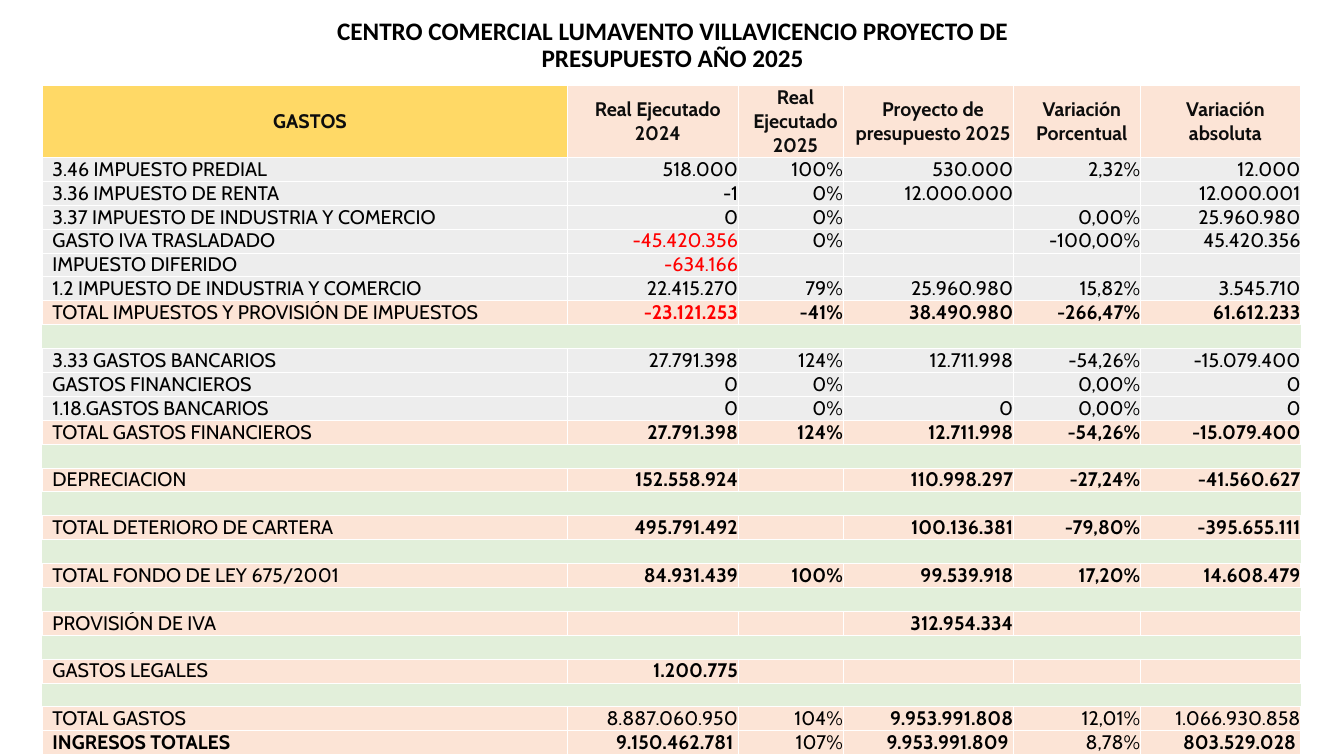
from lxml import etree
from pptx import Presentation
from pptx.dml.color import RGBColor
from pptx.enum.text import MSO_ANCHOR, MSO_AUTO_SIZE, PP_ALIGN
from pptx.oxml.ns import qn
from pptx.util import Inches, Pt

LEFT, MID, RIGHT = PP_ALIGN.LEFT, PP_ALIGN.CENTER, PP_ALIGN.RIGHT
CENTER, BOTTOM = MSO_ANCHOR.MIDDLE, MSO_ANCHOR.BOTTOM

TITLE = "CENTRO COMERCIAL LUMAVENTO VILLAVICENCIO PROYECTO DE\vPRESUPUESTO AÑO 2025"
GAP = ("gap", "", "", "", "", "", "")
ROWS = [
    ("head", "GASTOS", "Real Ejecutado 2024", "Real Ejecutado 2025",
     "Proyecto de presupuesto 2025", "Variación Porcentual", "Variación absoluta"),
    ("item", "3.46 IMPUESTO PREDIAL", "518.000", "100%", "530.000", "2,32%", "12.000"),
    ("item", "3.36 IMPUESTO DE RENTA", "-1", "0%", "12.000.000", "", "12.000.001"),
    ("item", "3.37 IMPUESTO DE INDUSTRIA Y COMERCIO", "0", "0%", "", "0,00%", "25.960.980"),
    ("item", "GASTO IVA TRASLADADO", "-45.420.356", "0%", "", "-100,00%", "45.420.356"),
    ("item", "IMPUESTO DIFERIDO", "-634.166", "", "", "", ""),
    ("item", "1.2 IMPUESTO DE INDUSTRIA Y COMERCIO", "22.415.270", "79%",
     "25.960.980", "15,82%", "3.545.710"),
    ("total", "TOTAL IMPUESTOS Y PROVISIÓN DE IMPUESTOS", "-23.121.253", "-41%",
     "38.490.980", "-266,47%", "61.612.233"),
    GAP,
    ("item", "3.33 GASTOS BANCARIOS", "27.791.398", "124%", "12.711.998", "-54,26%", "-15.079.400"),
    ("item", "GASTOS FINANCIEROS", "0", "0%", "", "0,00%", "0"),
    ("item", "1.18.GASTOS BANCARIOS", "0", "0%", "0", "0,00%", "0"),
    ("total", "TOTAL GASTOS FINANCIEROS", "27.791.398", "124%",
     "12.711.998", "-54,26%", "-15.079.400"),
    GAP,
    ("total", "DEPRECIACION", "152.558.924", "", "110.998.297", "-27,24%", "-41.560.627"),
    GAP,
    ("total", "TOTAL DETERIORO DE CARTERA", "495.791.492", "",
     "100.136.381", "-79,80%", "-395.655.111"),
    GAP,
    ("total", "TOTAL FONDO DE LEY 675/2001", "84.931.439", "100%",
     "99.539.918", "17,20%", "14.608.479"),
    GAP,
    ("total", "PROVISIÓN DE IVA", "", "", "312.954.334", "", ""),
    GAP,
    ("total", "GASTOS LEGALES", "1.200.775", "", "", "", ""),
    GAP,
    ("sum", "TOTAL GASTOS", "8.887.060.950", "104%", "9.953.991.808", "12,01%", "1.066.930.858"),
    ("income", "INGRESOS TOTALES", "9.150.462.781 ", "107%",
     "9.953.991.809 ", "8,78%", "803.529.028 "),
]
LOSS = {"-45.420.356", "-634.166", "-23.121.253"}
BOLD = {"head": range(6), "item": (), "gap": (), "total": range(1, 6),
        "sum": (3,), "income": (0, 1, 3, 5)}

THEME = {
    "fill": {"head": "FCE4D6", "item": "EDEDED", "gap": "E2EFDA",
             "total": "FCE4D6", "sum": "FCE4D6", "income": "FCE4D6"},
    "key": "FFD966", "ink": "000000", "dark": "0D0D0D", "loss": "FF0000", "rule": "FFFFFF",
    "title": ("Calibri", 18), "cell": ("Cabin", 14),
}
WIDE, HIGH = 13.33, 7.5
COLS = (5.21, 1.69, 1.04, 1.69, 1.26, 1.59)
HEAD, LINE = 0.64, 0.21
GRID = (0.42, 0.85, sum(COLS), HEAD + LINE * (len(ROWS) - 1))
BANNER = (0.92, 0.12, 11.5, 0.67)


def put(item, **attrs):
    for name, value in attrs.items():
        setattr(item, name, value)


def style(font, face, color, bold):
    name, size = face
    put(font, name=name, size=Pt(size), bold=bold)
    font.color.rgb = RGBColor.from_string(color)


def edge(cell, kind):
    props = cell._tc.get_or_add_tcPr()
    for side in "LRTB":
        line = etree.SubElement(props, qn("a:ln" + side), w=str(Pt(0.5)))
        if kind == "gap" and side in "LR":
            etree.SubElement(line, qn("a:noFill"))
        else:
            fill = etree.SubElement(line, qn("a:solidFill"))
            etree.SubElement(fill, qn("a:srgbClr"), val=THEME["rule"])


def fill_cell(cell, kind, col, text):
    head = kind == "head"
    put(cell, margin_left=Inches(0.1), margin_right=0, margin_top=0, margin_bottom=0,
        vertical_anchor=CENTER if head else BOTTOM)
    edge(cell, kind)
    cell.fill.solid()
    shade = THEME["key"] if head and col == 0 else THEME["fill"][kind]
    cell.fill.fore_color.rgb = RGBColor.from_string(shade)
    para = cell.text_frame.paragraphs[0]
    para.alignment = MID if head else RIGHT if col else LEFT
    if text:
        run = para.add_run()
        run.text = text
        color = THEME["dark" if head else "loss" if text in LOSS else "ink"]
        style(run.font, THEME["cell"], color, col in BOLD[kind])
    else:
        name, size = THEME["cell"]
        end = etree.SubElement(para._p, qn("a:endParaRPr"), sz=str(size * 100))
        etree.SubElement(end, qn("a:latin"), typeface=name)


def add_title(slide):
    title = slide.shapes.title
    put(title, **dict(zip(("left", "top", "width", "height"), map(Inches, BANNER))))
    frame = title.text_frame
    put(frame, text=TITLE, word_wrap=True, auto_size=MSO_AUTO_SIZE.NONE, vertical_anchor=CENTER)
    para = frame.paragraphs[0]
    put(para, alignment=MID, line_spacing=0.9)
    for run in para.runs:
        style(run.font, THEME["title"], THEME["ink"], True)


def add_grid(slide):
    table = slide.shapes.add_table(len(ROWS), len(COLS), *map(Inches, GRID)).table
    put(table, first_row=False, horz_banding=False)
    for col, width in zip(table.columns, COLS):
        col.width = Inches(width)
    for row, (kind, *texts) in zip(table.rows, ROWS):
        row.height = Inches(HEAD if kind == "head" else LINE)
        for col, (cell, text) in enumerate(zip(row.cells, texts)):
            fill_cell(cell, kind, col, text)


def main():
    deck = Presentation()
    put(deck, slide_width=Inches(WIDE), slide_height=Inches(HIGH))
    slide = deck.slides.add_slide(deck.slide_layouts[5])
    add_title(slide)
    add_grid(slide)
    deck.save("out.pptx")


if __name__ == "__main__":
    main()
